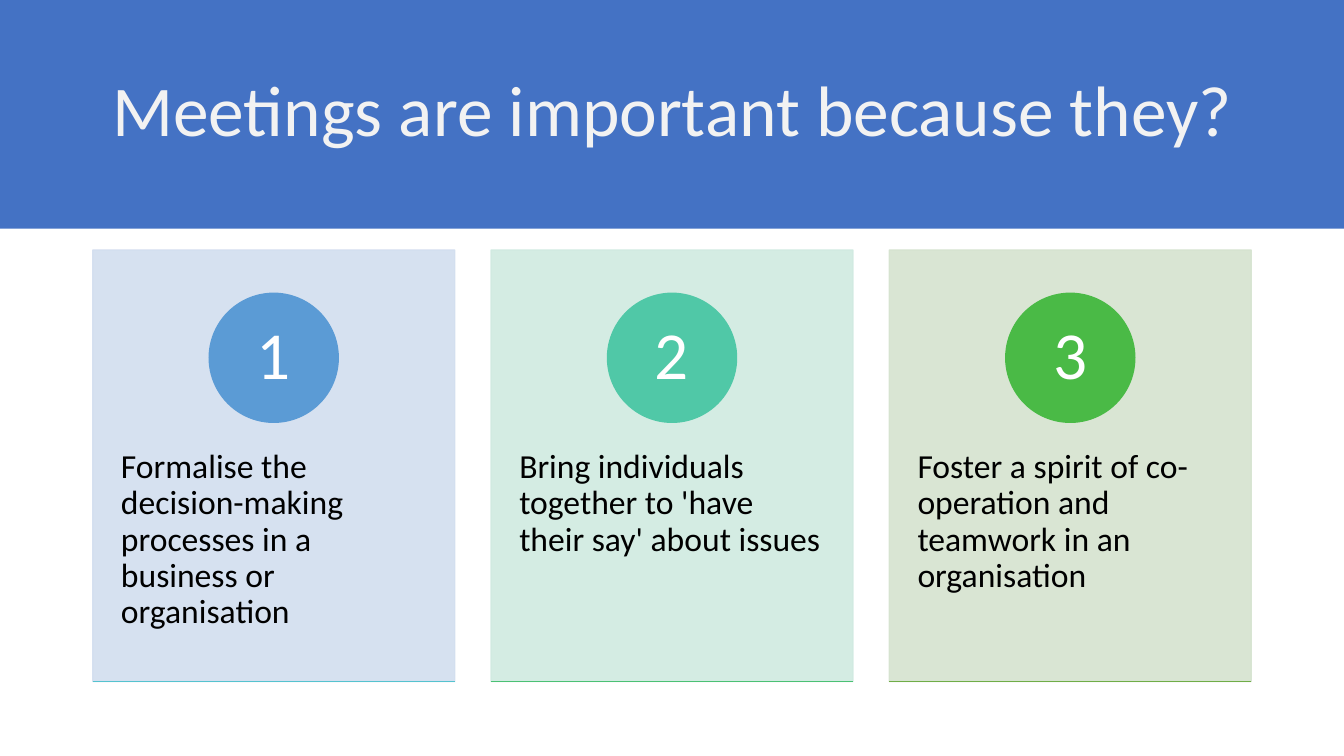
from lxml import etree
from pptx import Presentation
from pptx.dml.color import RGBColor
from pptx.enum.shapes import MSO_CONNECTOR, MSO_SHAPE
from pptx.enum.text import MSO_ANCHOR, PP_ALIGN
from pptx.oxml.ns import qn
from pptx.util import Inches, Pt

RECTANGLE, OVAL = MSO_SHAPE.RECTANGLE, MSO_SHAPE.OVAL
STRAIGHT = MSO_CONNECTOR.STRAIGHT
TOP, MIDDLE = MSO_ANCHOR.TOP, MSO_ANCHOR.MIDDLE
LEFT, CENTER = PP_ALIGN.LEFT, PP_ALIGN.CENTER

# Content
TITLE = "Meetings are important because they?"
REASONS = [
    ("1", "Formalise the decision-making processes in a business or organisation"),
    ("2", "Bring individuals together to 'have their say' about issues"),
    ("3", "Foster a spirit of co-operation and teamwork in an organisation"),
]

# Style
FONT = "Calibri"
COLORS = {
    "banner": "4472C4", "title": "F2F2F2", "number": "FFFFFF", "body": "000000",
    "card1": "D2DEEF", "circle1": "5B9BD5", "rule1": "55C3CF",
    "card2": "D0EAE1", "circle2": "50C8A7", "rule2": "4BC174",
    "card3": "D5E3CF", "circle3": "4ABA46", "rule3": "70AD47",
}
TITLE_FORMAT = {"size": 51, "color": "title", "align": CENTER, "anchor": MIDDLE,
                "margins": (0.1, 0.05)}
NUMBER_FORMAT = {"size": 48, "color": "number", "align": CENTER, "anchor": MIDDLE,
                 "margins": (0.1, 0.01)}
BODY_FORMAT = {"size": 24, "color": "body", "align": LEFT, "anchor": TOP,
               "margins": (0.28, 0.36)}

# Layout, in inches
SLIDE_WIDTH, SLIDE_HEIGHT = 13.33, 7.5
BANNER_HEIGHT = 2.27
CARD_LEFT, CARD_TOP, CARD_WIDTH, CARD_HEIGHT = 0.92, 2.48, 3.59, 4.28
CARD_STEP = 3.95
CIRCLE_TOP, CIRCLE_SIZE = 2.91, 1.28
BODY_TOP, BODY_HEIGHT = 4.1, 2.57


def rgb(name):
    return RGBColor.from_string(COLORS[name])


def add_block(slide, kind, box, color, opacity=100, outlined=True):
    shape = slide.shapes.add_shape(kind, *map(Inches, box))
    shape.shadow.inherit = False
    shape.fill.solid()
    shape.fill.fore_color.rgb = rgb(color)
    if outlined:
        shape.line.color.rgb = rgb(color)
        shape.line.width = Pt(1)
    else:
        shape.line.fill.background()
    if opacity < 100:
        for element in shape._element.spPr.iter(qn("a:srgbClr")):
            etree.SubElement(element, qn("a:alpha"), val=str(opacity * 1000))
    return shape


def write(shape, text, style):
    horizontal, vertical = map(Inches, style["margins"])
    frame = shape.text_frame
    frame_values = {
        "word_wrap": True, "vertical_anchor": style["anchor"],
        "margin_left": horizontal, "margin_right": horizontal,
        "margin_top": vertical, "margin_bottom": vertical,
    }
    paragraph = frame.paragraphs[0]
    run = paragraph.add_run()
    run.text = text
    run.font.color.rgb = rgb(style["color"])
    for target, values in (
        (frame, frame_values),
        (paragraph, {"alignment": style["align"], "line_spacing": 0.9}),
        (run.font, {"name": FONT, "size": Pt(style["size"])}),
    ):
        for name, value in values.items():
            setattr(target, name, value)


def add_text(slide, box, text, style):
    write(slide.shapes.add_textbox(*map(Inches, box)), text, style)


def add_rule(slide, left, top, width, color):
    rule = slide.shapes.add_connector(
        STRAIGHT, *map(Inches, (left, top, left + width, top)))
    rule.line.color.rgb = rgb(color)
    rule.line.width = Pt(1)
    etree.SubElement(rule._element.spPr, qn("a:effectLst"))


def add_card(slide, index, number, text):
    left = CARD_LEFT + index * CARD_STEP
    circle_left = left + (CARD_WIDTH - CIRCLE_SIZE) / 2
    add_block(slide, RECTANGLE, (left, CARD_TOP, CARD_WIDTH, CARD_HEIGHT),
              f"card{number}", opacity=90)
    add_text(slide, (left, BODY_TOP, CARD_WIDTH, BODY_HEIGHT), text, BODY_FORMAT)
    circle = add_block(slide, OVAL, (circle_left, CIRCLE_TOP, CIRCLE_SIZE, CIRCLE_SIZE),
                       f"circle{number}")
    write(circle, number, NUMBER_FORMAT)
    add_rule(slide, left, CARD_TOP + CARD_HEIGHT, CARD_WIDTH, f"rule{number}")


def main():
    presentation = Presentation()
    presentation.slide_width = Inches(SLIDE_WIDTH)
    presentation.slide_height = Inches(SLIDE_HEIGHT)
    slide = presentation.slides.add_slide(presentation.slide_layouts[6])

    # Title banner
    add_block(slide, RECTANGLE, (0, 0, SLIDE_WIDTH, BANNER_HEIGHT), "banner", outlined=False)
    add_text(slide, (0.92, 0.4, 11.5, 1.45), TITLE, TITLE_FORMAT)

    # Numbered cards
    for index, (number, text) in enumerate(REASONS):
        add_card(slide, index, number, text)

    presentation.save("out.pptx")


if __name__ == "__main__":
    main()
